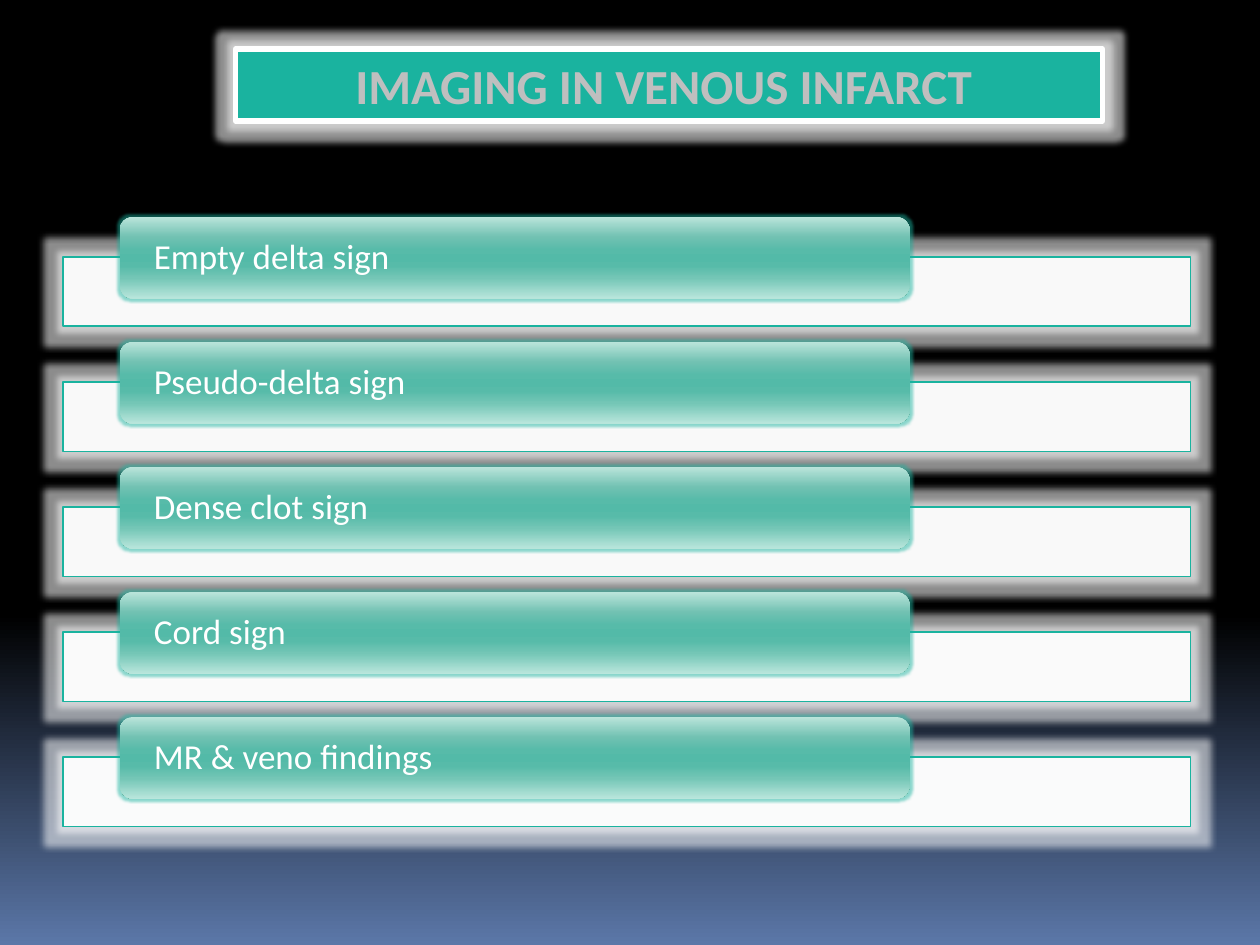
from dataclasses import dataclass

from lxml.etree import SubElement
from pptx import Presentation
from pptx.dml.color import RGBColor
from pptx.enum.shapes import MSO_SHAPE
from pptx.enum.text import MSO_ANCHOR, PP_ALIGN
from pptx.oxml.ns import qn
from pptx.util import Inches, Pt

WHITE = RGBColor(0xFF, 0xFF, 0xFF)
BLACK = RGBColor(0x00, 0x00, 0x00)
SILVER = RGBColor(0xBF, 0xBF, 0xBF)
TEAL = RGBColor(0x1A, 0xB3, 0x9F)
DUSK = RGBColor(0x5B, 0x77, 0xA8)
BACKDROP = [(0, BLACK), (65, BLACK), (100, DUSK)]
GLOSS = [
    (0, RGBColor(0xBB, 0xE5, 0xDB)),
    (25, RGBColor(0x71, 0xC1, 0xB2)),
    (40, RGBColor(0x57, 0xBB, 0xA9)),
    (50, RGBColor(0x53, 0xBA, 0xA8)),
    (60, RGBColor(0x57, 0xBB, 0xA9)),
    (75, RGBColor(0x74, 0xC6, 0xB6)),
    (100, RGBColor(0xB9, 0xE6, 0xDC)),
]
SIGNS = ["Empty delta sign", "Pseudo-delta sign", "Dense clot sign", "Cord sign", "MR & veno findings"]
LABEL_TOP, ROW_PITCH, BAR_DROP = 1.72, 0.9925, 0.32
LABEL_FONT = {"name": "Calibri", "size": Pt(20)}
TITLE_FONT = {"name": "Calibri", "size": Pt(28), "bold": True}


@dataclass(frozen=True)
class Box:
    """Place of a panel on the slide, in inches."""

    left: float
    top: float
    width: float
    height: float


def add_color(parent, color: RGBColor, alpha: int = 100) -> None:
    """Append a colour with an opacity in percent."""
    node = SubElement(parent, qn("a:srgbClr"), val=str(color))
    if alpha < 100:
        SubElement(node, qn("a:alpha"), val=str(alpha * 1000))


def shade(fill, owner, stops: list) -> None:
    """Give a fill a top-to-bottom gradient with the stops."""
    fill.gradient()
    fill.gradient_angle = 270
    ramp = next(owner.iter(qn("a:gsLst")))
    for old in list(ramp):
        ramp.remove(old)
    for position, color in stops:
        add_color(SubElement(ramp, qn("a:gs"), pos=str(position * 1000)), color)


def add_panel(slide, kind, box: Box, glow: RGBColor, radius: float, alpha: int):
    """Draw a preset shape with a soft halo."""
    panel = slide.shapes.add_shape(
        kind, Inches(box.left), Inches(box.top), Inches(box.width), Inches(box.height))
    panel.shadow.inherit = False
    effects = panel._element.spPr.find(qn("a:effectLst"))
    add_color(SubElement(effects, qn("a:glow"), rad=str(Inches(radius))), glow, alpha)
    return panel


def paint(panel, fill: RGBColor, line: RGBColor, width: float) -> None:
    """Set a solid fill and an outline."""
    panel.fill.solid()
    panel.fill.fore_color.rgb = fill
    panel.line.color.rgb = line
    panel.line.width = Pt(width)


def write(panel, words: str, font: dict, color: RGBColor, align, frame: dict) -> None:
    """Put one formatted paragraph in a panel."""
    text_frame = panel.text_frame
    for key, value in frame.items():
        setattr(text_frame, key, value)
    paragraph = text_frame.paragraphs[0]
    paragraph.alignment = align
    run = paragraph.add_run()
    run.text = words
    for key, value in font.items():
        setattr(run.font, key, value)
    run.font.color.rgb = color


def add_sign(slide, row: int, sign: str) -> None:
    """Draw one row: a pale bar with a glossy label over it."""
    top = LABEL_TOP + row * ROW_PITCH
    bar = add_panel(slide, MSO_SHAPE.RECTANGLE, Box(0.5, top + BAR_DROP, 8.95, 0.55), WHITE, 0.1, 55)
    paint(bar, WHITE, TEAL, 0.94)
    tint = bar._element.spPr.find(qn("a:solidFill"))[0]
    SubElement(tint, qn("a:alpha"), val="90000")

    label = add_panel(slide, MSO_SHAPE.ROUNDED_RECTANGLE, Box(0.95, top, 6.27, 0.65), TEAL, 0.04, 50)
    shade(label.fill, label._element, GLOSS)
    label.line.fill.background()
    frame = {"margin_left": Inches(0.24), "margin_right": Inches(0.24), "margin_top": 0,
             "margin_bottom": 0, "vertical_anchor": MSO_ANCHOR.MIDDLE, "word_wrap": True}
    write(label, sign, LABEL_FONT, WHITE, PP_ALIGN.LEFT, frame)
    label.text_frame.paragraphs[0].line_spacing = 0.9


def main() -> None:
    """Build the slide and save it."""
    deck = Presentation()
    deck.slide_width, deck.slide_height = Inches(10), Inches(7.5)
    slide = deck.slides.add_slide(deck.slide_layouts[6])
    shade(slide.background.fill, slide._element, BACKDROP)
    for row, sign in enumerate(SIGNS):
        add_sign(slide, row, sign)
    title = add_panel(slide, MSO_SHAPE.RECTANGLE, Box(1.87, 0.39, 6.88, 0.57), WHITE, 0.1, 55)
    paint(title, TEAL, WHITE, 3)
    write(title, "IMAGING IN VENOUS INFARCT ", TITLE_FONT, SILVER, PP_ALIGN.CENTER,
          {"vertical_anchor": MSO_ANCHOR.TOP, "word_wrap": True})
    deck.save("out.pptx")


if __name__ == "__main__":
    main()
